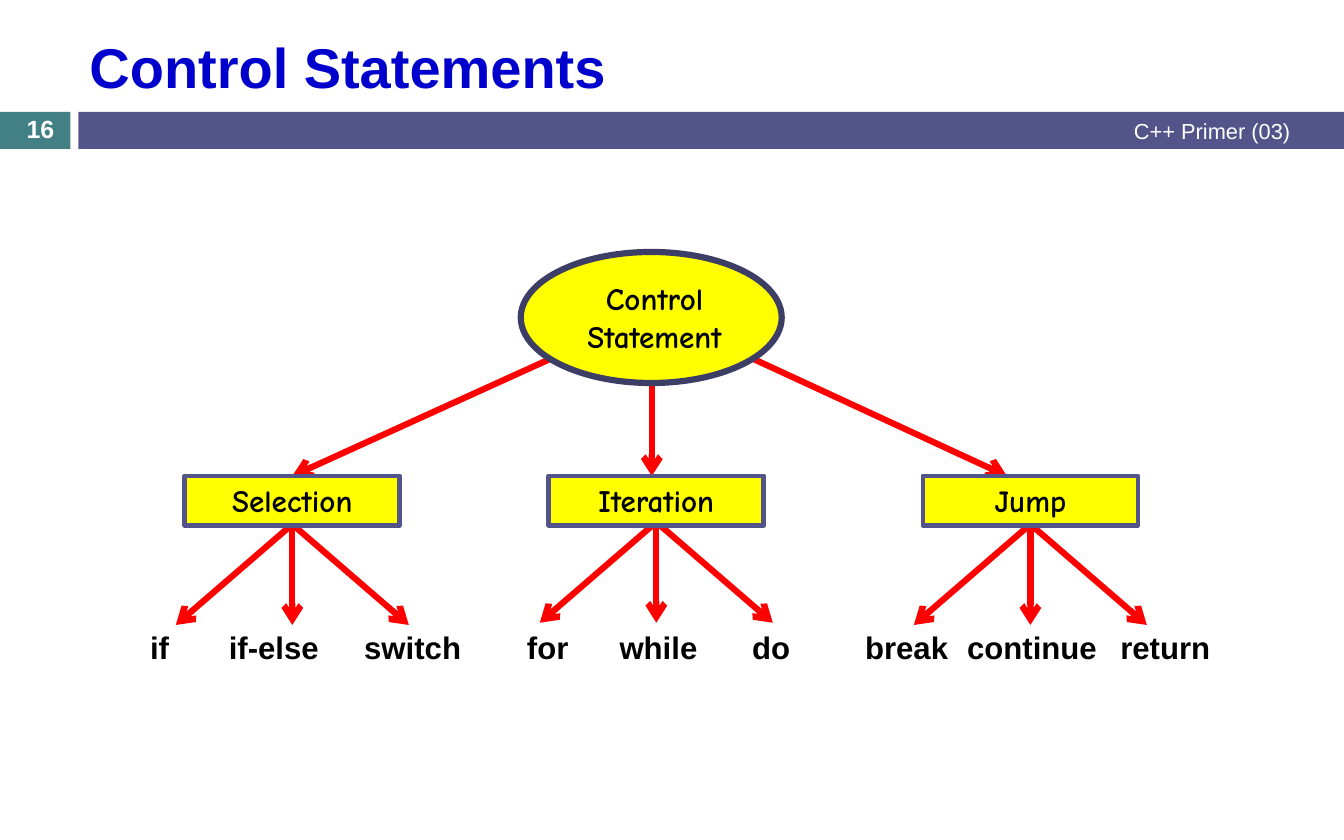
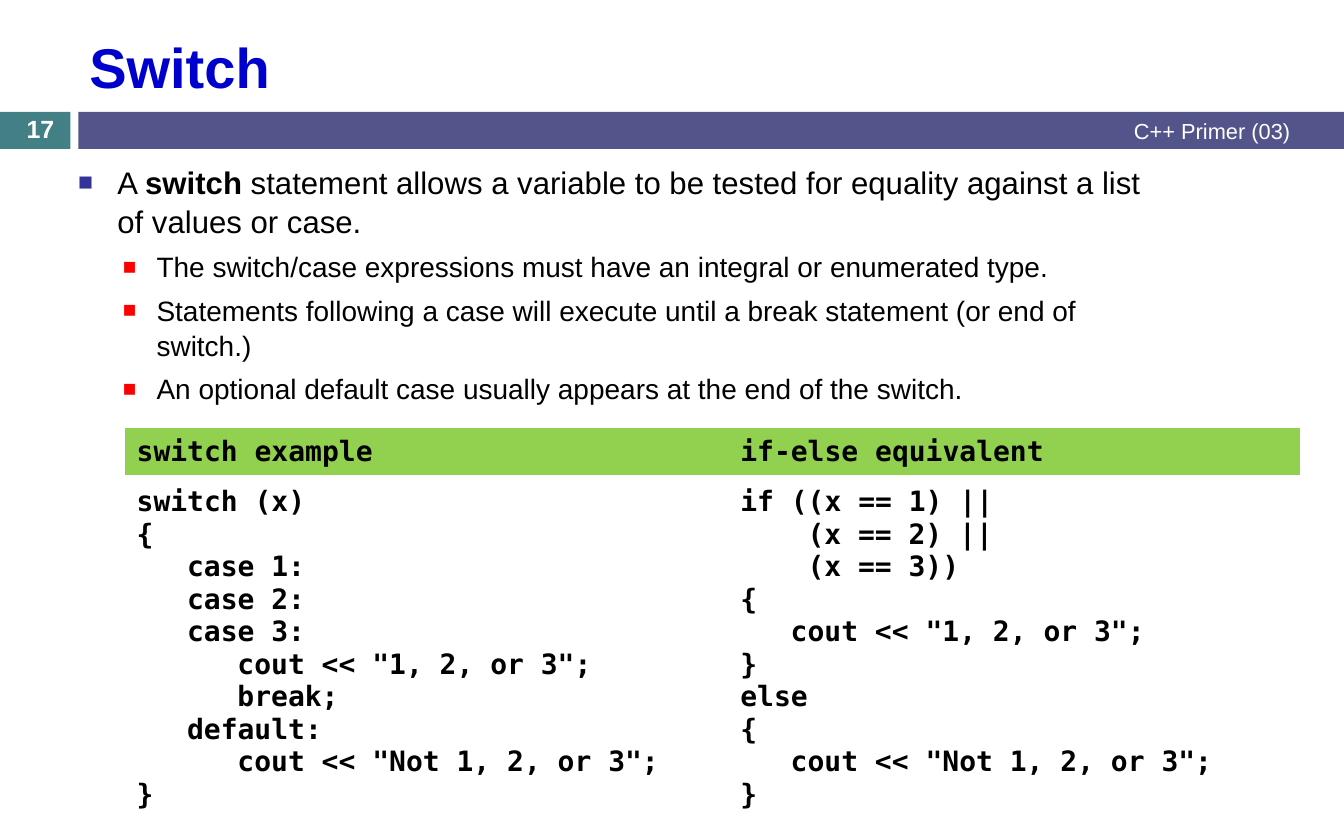
import pptx
import pptx.util
import pptx.oxml
import pptx.oxml.ns
import pptx.dml.color
import pptx.enum.shapes
import pptx.enum.text
import lxml.etree

Inches, Pt = pptx.util.Inches, pptx.util.Pt
SHAPE = pptx.enum.shapes.MSO_SHAPE
ANCHOR = pptx.enum.text.MSO_ANCHOR
ALIGN = pptx.enum.text.PP_ALIGN

COLORS = {
    "teal": "438086", "violet": "53548A", "rim": "3D3E66", "title": "0000CC",
    "red": "FF0000", "yellow": "FFFF00", "green": "92D050", "navy": "333399",
    "black": "000000", "white": "FFFFFF",
}
SANS, COMIC, MONO = "Arial", "Comic Neue", "DejaVu Sans Mono"
FOOTER = "C++ Primer (03)"
NO_STYLE = "{2D5ABB26-0587-4C30-8999-92F81FD0307C}"

ROOT = ["Control", "Statement"]
# Each branch: name, box left, stem start, stem end x, fan top, leaves (text, left, width)
BRANCHES = [
    ("Selection", 1.65, (4.99, 3.17), 2.61, 4.69,
     [("if", 1.24, 0.37), ("if-else", 1.94, 1.01), ("switch", 3.15, 1.07)]),
    ("Iteration", 4.9, (5.82, 3.33), 5.82, 4.67,
     [("for", 4.6, 0.58), ("while", 5.43, 0.9), ("do", 6.61, 0.55)]),
    ("Jump", 8.24, (6.65, 3.17), 8.99, 4.69,
     [("break", 7.62, 0.95), ("continue", 8.53, 1.37), ("return", 9.9, 1.01)]),
]
BOX_TOP, BOX_W, BOX_H = 4.25, 1.92, 0.44
LEAF_TOP, FAN_DX, FAN_DY = 5.56, 1.04, 0.89

# Each point: level, runs (text, bold)
POINTS = [
    (0, [("A ", False), ("switch", True),
         (" statement allows a variable to be tested for equality"
          " against a list of values or case.", False)]),
    (1, "The switch/case expressions must have an integral or enumerated type."),
    (1, "Statements following a case will execute until a break statement"
        " (or end of switch.)"),
    (1, "An optional default case usually appears at the end of the switch."),
]
LEVELS = [
    dict(size=20, indent=0.35, hang=0.35, before=7, bullet="navy"),
    dict(size=18, indent=0.7, hang=0.3, before=5.5, bullet="red"),
]

# Each code line: columns of indent, text
CODE = {
    "switch example": [
        (0, "switch (x)"), (0, "{"), (3, "case 1:"), (3, "case 2:"),
        (3, "case 3:"), (6, 'cout << "1, 2, or 3";'), (6, "break;"),
        (3, "default:"), (6, 'cout << "Not 1, 2, or 3";'), (0, "}")],
    "if-else equivalent": [
        (0, "if ((x == 1) ||"), (4, "(x == 2) ||"), (4, "(x == 3))"),
        (0, "{"), (3, 'cout << "1, 2, or 3";'), (0, "}"), (0, "else"),
        (0, "{"), (3, 'cout << "Not 1, 2, or 3";'), (0, "}")],
}
COLUMNS, ROWS = [5.39, 5.1], [0.42, 2.98]
CHAR_W = 0.15


def rgb(name):
    return pptx.dml.color.RGBColor.from_string(COLORS[name])


def add_xml(parent, tag, **attrs):
    node = lxml.etree.SubElement(parent, pptx.oxml.ns.qn(tag))
    for key, value in attrs.items():
        node.set(key, str(value))
    return node


def write(frame, content, first=True, size=20, font=SANS, color="black",
          bold=False, align=None, indent=0, hang=0, before=None,
          bullet=None, spacing=None):
    """Write one paragraph: a string, or a list of (text, bold) runs."""
    para = frame.paragraphs[0] if first else frame.add_paragraph()
    if align:
        para.alignment = align
    if before:
        para.space_before = Pt(before)
    if spacing:
        para.line_spacing = spacing
    runs = [(content, bold)] if isinstance(content, str) else content
    for words, heavy in runs:
        run = para.add_run()
        run.text = words
        face = run.font
        face.size, face.name, face.bold = Pt(size), font, heavy
        face.color.rgb = rgb(color)
    props = para._p.get_or_add_pPr()
    if indent:
        props.set("marL", str(Inches(indent)))
        props.set("indent", str(-Inches(hang)))
    if bullet:
        tint = add_xml(props, "a:buClr")
        add_xml(tint, "a:srgbClr", val=COLORS[bullet])
        add_xml(props, "a:buSzPct", val=80000)
        add_xml(props, "a:buFont", typeface=SANS)
        add_xml(props, "a:buChar", char="■")


def add_text(slide, box, lines, wrap=True, anchor=ANCHOR.TOP, **style):
    frame = slide.shapes.add_textbox(*map(Inches, box)).text_frame
    frame.word_wrap, frame.vertical_anchor = wrap, anchor
    for i, line in enumerate(lines):
        write(frame, line, first=i == 0, **style)
    return frame


def add_block(slide, kind, box, fill, line=None, width=0):
    shape = slide.shapes.add_shape(kind, *map(Inches, box))
    shape.shadow.inherit = False
    shape.fill.solid()
    shape.fill.fore_color.rgb = rgb(fill)
    if line:
        shape.line.color.rgb = rgb(line)
        shape.line.width = Pt(width)
    else:
        shape.line.fill.background()
    return shape


def add_arrow(slide, start, end):
    arrow = slide.shapes.add_connector(
        pptx.enum.shapes.MSO_CONNECTOR.STRAIGHT, *map(Inches, (*start, *end)))
    arrow.line.color.rgb = rgb("red")
    arrow.line.width = Pt(4)
    add_xml(arrow.line._get_or_add_ln(), "a:tailEnd", type="arrow")
    add_xml(arrow._element.spPr, "a:effectLst")


def add_page(deck, title, number):
    """Add a slide with the shared title, band, footer and number."""
    slide = deck.slides.add_slide(deck.slide_layouts[6])
    add_block(slide, SHAPE.RECTANGLE, (0, 1, 0.63, 0.33), "teal")
    add_block(slide, SHAPE.RECTANGLE, (0.7, 1, 11.3, 0.33), "violet")
    middle = ANCHOR.MIDDLE
    add_text(slide, (0.7, 0.19, 10.91, 0.8), [title], anchor=middle,
             size=36, color="title", bold=True)
    add_text(slide, (6.17, 1, 5.45, 0.33), [FOOTER], anchor=middle,
             size=14, color="white", align=ALIGN.RIGHT)
    add_text(slide, (0, 1, 0.72, 0.3), [str(number)], anchor=middle,
             size=16, color="white", bold=True, align=ALIGN.CENTER)
    return slide


def add_branch(slide, name, left, start, stem_x, fan_top, leaves):
    label = dict(bold=True, align=ALIGN.CENTER)
    add_arrow(slide, start, (stem_x, BOX_TOP))
    for leaf, x, width in leaves:
        add_text(slide, (x, LEAF_TOP, width, BOX_H), [leaf], wrap=False, **label)
    hub = left + BOX_W / 2
    for side in (-1, 1, 0):
        add_arrow(slide, (hub + side * 0.01, fan_top),
                  (hub + side * FAN_DX, fan_top + FAN_DY))
    box = add_block(slide, SHAPE.RECTANGLE, (left, BOX_TOP, BOX_W, BOX_H),
                    "yellow", "violet", 3)
    box.text_frame.vertical_anchor = ANCHOR.TOP
    write(box.text_frame, name, font=COMIC, **label)


def add_tree(slide):
    for branch in BRANCHES:
        add_branch(slide, *branch)
    add_block(slide, SHAPE.OVAL, (4.65, 2.25, 2.33, 1.17), "yellow", "rim", 4)
    add_text(slide, (4.93, 2.45, 1.83, 0.77), ROOT, font=COMIC, bold=True,
             align=ALIGN.CENTER)


def add_code(slide):
    frame = slide.shapes.add_table(
        2, 2, *map(Inches, (1.12, 3.82, sum(COLUMNS), sum(ROWS))))
    table = frame.table
    table.first_row = table.horz_banding = False
    frame._element.xpath(".//a:tableStyleId")[0].text = NO_STYLE
    for row, height in zip(table.rows, ROWS):
        row.height = Inches(height)
    for col, (head, lines) in enumerate(CODE.items()):
        table.columns[col].width = Inches(COLUMNS[col])
        for row, part in enumerate(([(0, head)], lines)):
            cell = table.cell(row, col)
            cell.vertical_anchor = ANCHOR.MIDDLE
            if row == 0:
                cell.fill.solid()
                cell.fill.fore_color.rgb = rgb("green")
            else:
                cell.fill.background()
            for i, (depth, line) in enumerate(part):
                write(cell.text_frame, line, first=i == 0, size=18, font=MONO,
                      bold=True, indent=depth * CHAR_W)


def add_points(slide):
    frame = add_text(slide, (0.6, 1.4, 9.84, 2.29), [])
    for i, (level, words) in enumerate(POINTS):
        write(frame, words, first=i == 0, spacing=1.04, **LEVELS[level])
        frame.paragraphs[i].level = level


def main():
    deck = pptx.Presentation()
    deck.slide_width, deck.slide_height = Inches(12), Inches(7.5)
    add_tree(add_page(deck, "Control Statements", 16))
    slide = add_page(deck, "Switch", 17)
    add_code(slide)
    add_points(slide)
    deck.save("out.pptx")


if __name__ == "__main__":
    main()
